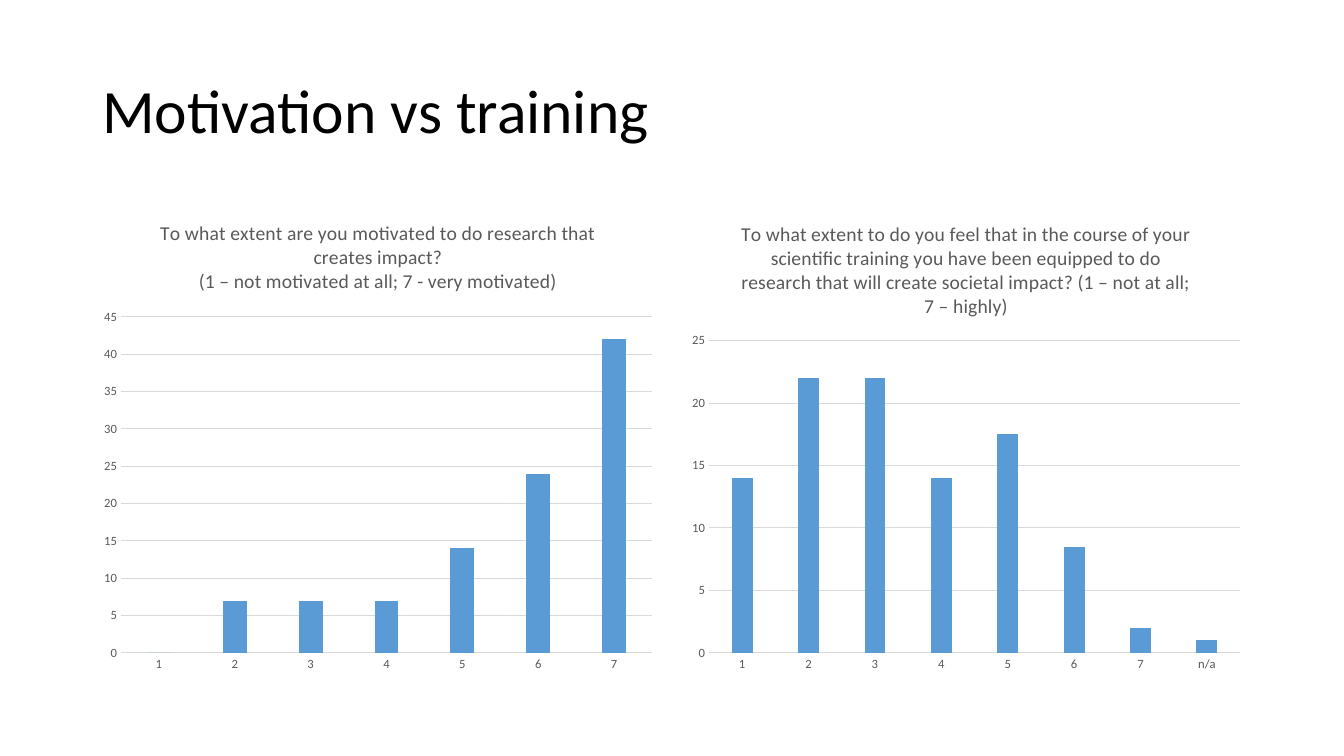
from lxml.etree import SubElement
from pptx import Presentation
from pptx.chart.data import CategoryChartData
from pptx.dml.color import RGBColor
from pptx.enum.chart import XL_CHART_TYPE as ChartType, XL_TICK_MARK as TickMark
from pptx.enum.text import MSO_ANCHOR as Anchor
from pptx.oxml.ns import qn
from pptx.util import Pt

TITLE = "Motivation vs training"
# question lines, categories, values, axis maximum, plot top as a share of the chart height
CHARTS = [
    (["To what extent are you motivated to do research that creates impact?",
      "(1 – not motivated at all; 7 - very motivated)"],
     ["1", "2", "3", "4", "5", "6", "7"],
     [0, 7, 7, 7, 14, 24, 42], 45, 0.24),
    (["To what extent to do you feel that in the course of your scientific training "
      "you have been equipped to do research that will create societal impact? "
      "(1 – not at all; 7 – highly)"],
     ["1", "2", "3", "4", "5", "6", "7", "n/a"],
     [14, 22, 22, 14, 17.5, 8.5, 2, 1], 25, 0.29),
]

FONT = "Calibri"
BLACK = RGBColor(0x00, 0x00, 0x00)
GRAY = RGBColor(0x59, 0x59, 0x59)
LIGHT_GRAY = RGBColor(0xD9, 0xD9, 0xD9)
BLUE = RGBColor(0x5B, 0x9B, 0xD5)

LEFT, CONTENT_WIDTH = 66, 828
CHART_TOP, CHART_WIDTH, CHART_HEIGHT = 144, 408, 343
CHART_STEP = CONTENT_WIDTH - CHART_WIDTH
PLOT_LEFT, PLOT_WIDTH, PLOT_BOTTOM = 0.05, 0.93, 0.94
AXIS_STEP = 5


def style_font(font, size, color):
    font.name = FONT
    font.size = Pt(size)
    font.bold = False
    font.color.rgb = color


def style_line(line):
    line.color.rgb = LIGHT_GRAY
    line.width = Pt(0.75)


def place_plot(chart, top):
    """Fix the inner plot area, in shares of the chart size."""
    plot_area = chart.element.find(".//" + qn("c:plotArea"))
    for layout in plot_area.findall(qn("c:layout")):
        plot_area.remove(layout)
    layout = SubElement(plot_area, qn("c:layout"))
    plot_area.insert(0, layout)
    manual = SubElement(layout, qn("c:manualLayout"))
    settings = [("layoutTarget", "inner"), ("xMode", "edge"), ("yMode", "edge"),
                ("x", PLOT_LEFT), ("y", top),
                ("w", PLOT_WIDTH), ("h", round(PLOT_BOTTOM - top, 2))]
    for name, value in settings:
        SubElement(manual, qn("c:" + name)).set("val", str(value))


def add_question_chart(slide, left, question, categories, values, maximum, plot_top):
    data = CategoryChartData()
    data.categories = categories
    data.add_series("Series 1", values)
    chart = slide.shapes.add_chart(
        ChartType.COLUMN_CLUSTERED, Pt(left), Pt(CHART_TOP),
        Pt(CHART_WIDTH), Pt(CHART_HEIGHT), data).chart
    style_font(chart.font, 10, BLACK)
    chart.has_legend = False

    chart.has_title = True
    chart.chart_title.include_in_layout = False
    title_frame = chart.chart_title.text_frame
    title_frame.text = "\n".join(question)
    for paragraph in title_frame.paragraphs:
        style_font(paragraph.font, 14, GRAY)
        for run in paragraph.runs:
            style_font(run.font, 14, GRAY)

    plot = chart.plots[0]
    plot.gap_width = 219
    plot.overlap = -27
    plot.vary_by_categories = False
    fill = plot.series[0].format.fill
    fill.solid()
    fill.fore_color.rgb = BLUE

    for axis in (chart.category_axis, chart.value_axis):
        axis.major_tick_mark = axis.minor_tick_mark = TickMark.NONE
        style_font(axis.tick_labels.font, 9, GRAY)
    style_line(chart.category_axis.format.line)
    value_axis = chart.value_axis
    value_axis.format.line.fill.background()
    value_axis.minimum_scale = 0
    value_axis.maximum_scale = maximum
    value_axis.major_unit = AXIS_STEP
    value_axis.has_major_gridlines = True
    style_line(value_axis.major_gridlines.format.line)
    place_plot(chart, plot_top)


def add_title(slide):
    box = slide.shapes.add_textbox(Pt(LEFT), Pt(28.8), Pt(CONTENT_WIDTH), Pt(104.4))
    text_frame = box.text_frame
    text_frame.word_wrap = True
    text_frame.vertical_anchor = Anchor.MIDDLE
    text_frame.text = TITLE
    paragraph = text_frame.paragraphs[0]
    paragraph.line_spacing = 0.9
    style_font(paragraph.runs[0].font, 44, BLACK)


def main():
    presentation = Presentation()
    presentation.slide_width = Pt(960)
    presentation.slide_height = Pt(540)
    slide = presentation.slides.add_slide(presentation.slide_layouts[6])
    add_title(slide)
    for index, content in enumerate(CHARTS):
        add_question_chart(slide, LEFT + index * CHART_STEP, *content)
    presentation.save("out.pptx")


if __name__ == "__main__":
    main()
